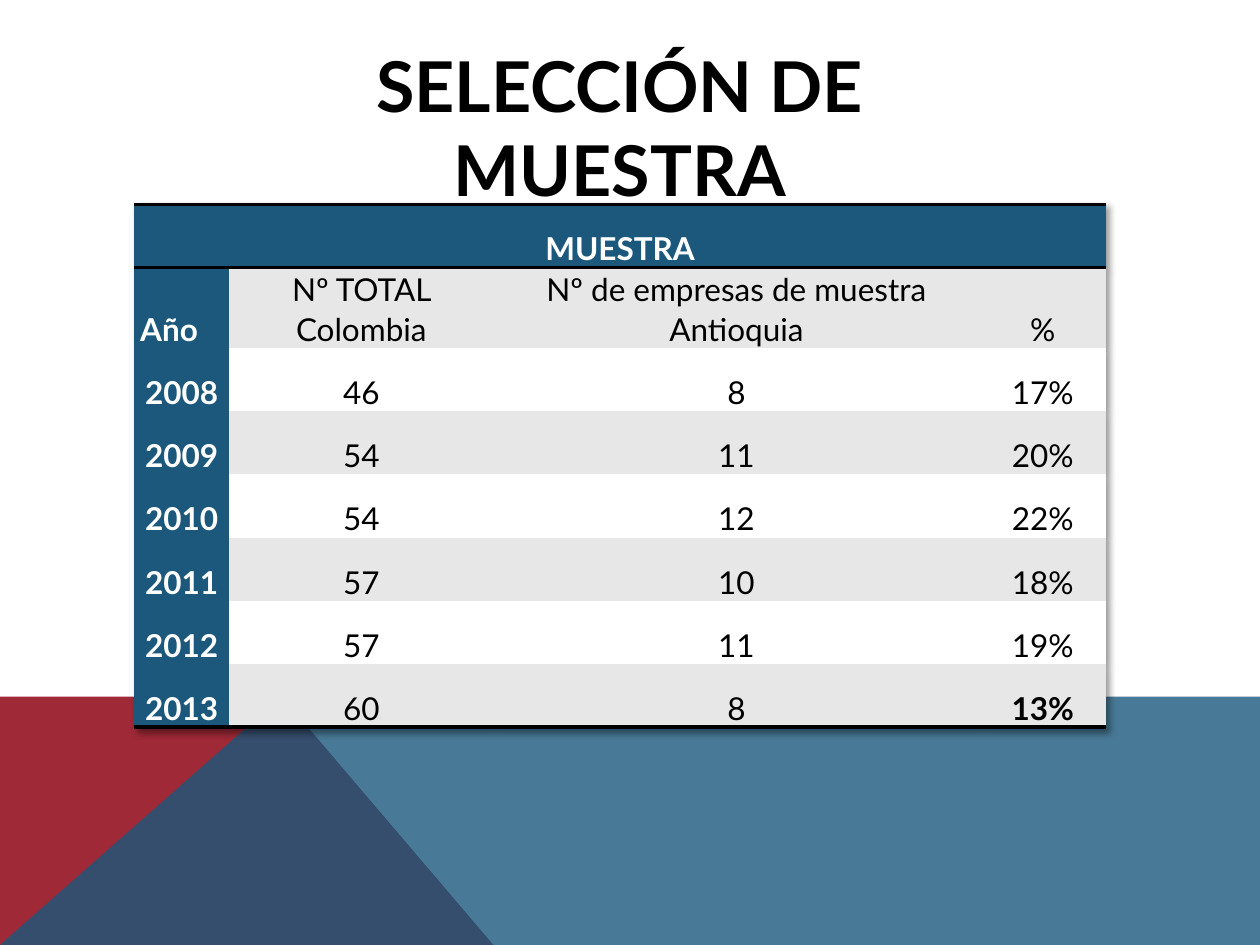
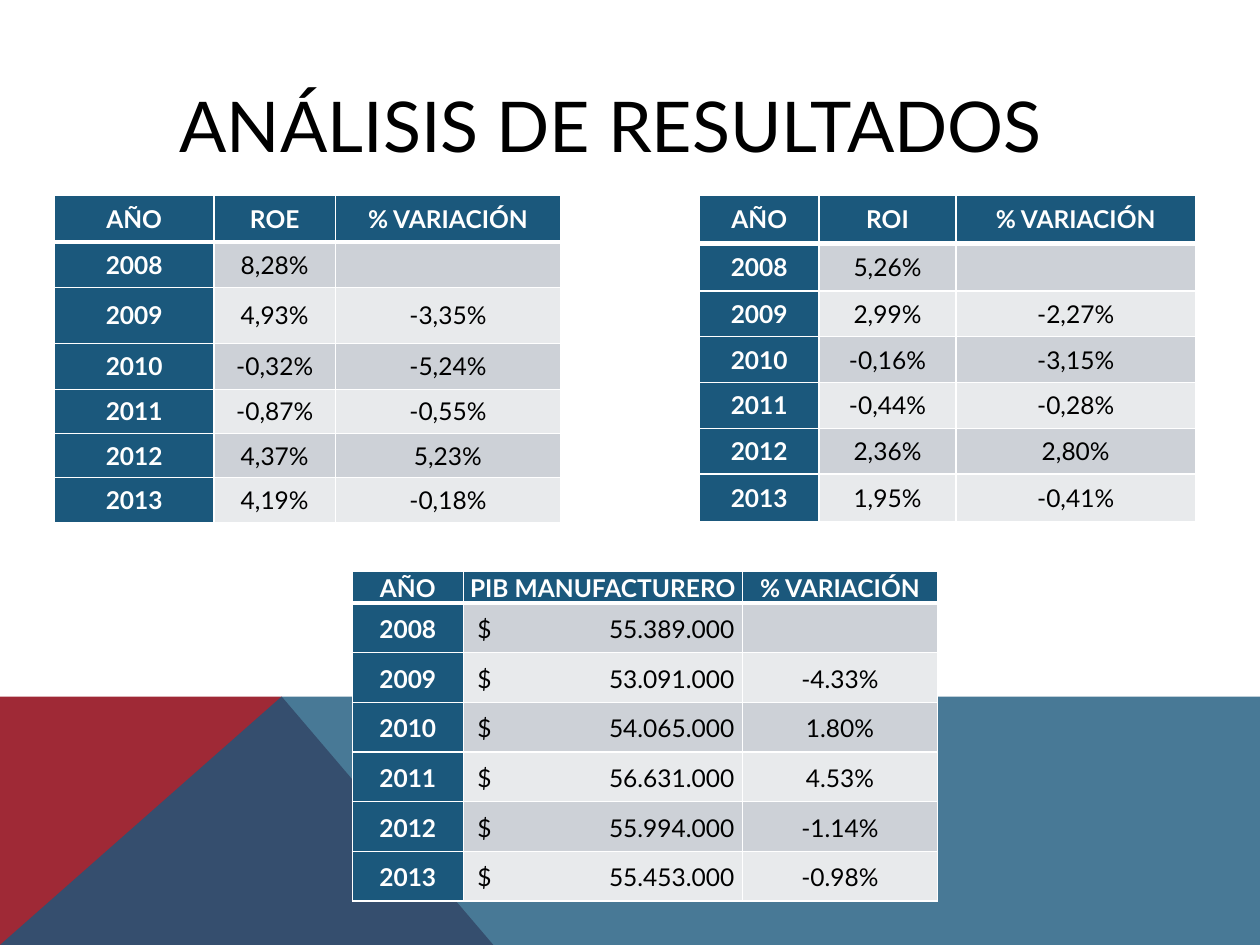
from dataclasses import dataclass

from lxml import etree
from pptx import Presentation, util as u
from pptx.dml.color import RGBColor
from pptx.enum import text
from pptx.oxml.ns import qn
from pptx.util import Pt


# Theme
@dataclass(frozen=True)
class Theme:
    font: str = "Lato"
    black: str = "000000"
    white: str = "FFFFFF"
    blue: str = "1B587C"
    red: str = "9F2936"
    greys: tuple[str, str] = ("E7E7E7", "FFFFFF")
    tints: tuple[str, str] = ("CDD1D7", "E8EAEC")
    title_size: int = 40
    sample_size: int = 18
    result_size: int = 14


THEME = Theme()
SLIDE_WIDTH, SLIDE_HEIGHT = 720, 540
NO_STYLE = "{2D5ABB26-0587-4C30-8999-92F81FD0307C}"
YEARS = ("2008", "2009", "2010", "2011", "2012", "2013")
Rows = list[tuple[str, ...]]


@dataclass(frozen=True)
class Band:
    points: tuple[tuple[float, float], ...]
    color: str
    opacity: int = 100


@dataclass(frozen=True)
class Title:
    wording: str
    left: float
    top: float
    width: float
    height: float
    bold: bool = False
    anchor: text.MSO_ANCHOR = text.MSO_ANCHOR.MIDDLE


@dataclass(frozen=True)
class DataTable:
    left: float
    top: float
    widths: tuple[float, ...]
    heights: tuple[float, ...]
    rows: Rows
    size: int = THEME.result_size
    stripes: tuple[str, str] = THEME.tints
    anchor: text.MSO_ANCHOR = text.MSO_ANCHOR.MIDDLE
    side_margin: float = 0.72
    line_spacing: float = 1.0
    grid: bool = True


BAND_TOP, PEAK_X = 397.5, 160.6
BANDS = (
    Band(((0, SLIDE_HEIGHT), (0, BAND_TOP), (PEAK_X, BAND_TOP), (281.5, SLIDE_HEIGHT)),
         THEME.red),
    Band(((0, SLIDE_HEIGHT), (PEAK_X, BAND_TOP), (SLIDE_WIDTH, BAND_TOP),
          (SLIDE_WIDTH, SLIDE_HEIGHT)), THEME.blue, 80),
)


# Drawing helpers
def add_element(parent: etree._Element, tag: str, **attributes: object) -> etree._Element:
    values = {name: str(value) for name, value in attributes.items()}
    return etree.SubElement(parent, qn(tag), values)


def format_paragraph(paragraph, size: int, color: str, bold: bool,
                     alignment=text.PP_ALIGN.CENTER) -> None:
    paragraph.alignment = alignment
    for run in paragraph.runs:
        run.font.name = THEME.font
        run.font.size = Pt(size)
        run.font.bold = bold
        run.font.color.rgb = RGBColor.from_string(color)


def draw_band(slide, band: Band) -> None:
    builder = slide.shapes.build_freeform(*band.points[0], scale=float(Pt(1)))
    builder.add_line_segments(band.points[1:], close=True)
    shape = builder.convert_to_shape()
    shape.shadow.inherit = False
    shape.line.fill.background()
    shape.fill.solid()
    shape.fill.fore_color.rgb = RGBColor.from_string(band.color)
    if band.opacity < 100:
        color = next(shape.element.spPr.iter(qn("a:srgbClr")))
        add_element(color, "a:alpha", val=band.opacity * 1000)


def draw_title(slide, title: Title) -> None:
    box = slide.shapes.add_textbox(
        Pt(title.left), Pt(title.top), Pt(title.width), Pt(title.height))
    frame = box.text_frame
    frame.word_wrap = True
    frame.vertical_anchor = title.anchor
    frame.text = title.wording
    format_paragraph(frame.paragraphs[0], THEME.title_size, THEME.black, title.bold)


def set_border(cell, side: str, color: str, width: float) -> None:
    """Draw one side (L, R, T or B); a width of zero leaves it out."""
    properties = cell._tc.get_or_add_tcPr()
    line = add_element(properties, f"a:ln{side}", w=int(Pt(width)))
    if width:
        add_element(add_element(line, "a:solidFill"), "a:srgbClr", val=color)
    else:
        add_element(line, "a:noFill")


def border_width(side: str, row: int, last_row: int, grid: bool) -> float:
    under_header = (row, side) in ((0, "B"), (1, "T"))
    if grid:
        return 3 if under_header else 1
    outer = (row, side) in ((0, "T"), (last_row, "B"))
    return 2 if under_header or outer else 0


def draw_table(slide, data: DataTable):
    frame = slide.shapes.add_table(
        len(data.rows), len(data.widths), Pt(data.left), Pt(data.top),
        Pt(sum(data.widths)), Pt(sum(data.heights)))
    next(frame.element.iter(qn("a:tableStyleId"))).text = NO_STYLE
    table = frame.table
    for column, width in zip(table.columns, data.widths):
        column.width = Pt(width)
    for row, height in zip(table.rows, data.heights):
        row.height = Pt(height)

    line_color = THEME.white if data.grid else THEME.black
    for i, row in enumerate(data.rows):
        for j, wording in enumerate(row):
            cell = table.cell(i, j)
            for side in "LRTB":
                width = border_width(side, i, len(data.rows) - 1, data.grid)
                set_border(cell, side, line_color, width)
            is_heading = i == 0 or j == 0
            fill = THEME.blue if is_heading else data.stripes[(i - 1) % 2]
            cell.fill.solid()
            cell.fill.fore_color.rgb = RGBColor.from_string(fill)
            cell.vertical_anchor = data.anchor
            cell.margin_left = cell.margin_right = Pt(data.side_margin)
            cell.margin_top = cell.margin_bottom = 0
            cell.text_frame.text = wording
            paragraph = cell.text_frame.paragraphs[0]
            paragraph.line_spacing = data.line_spacing
            format_paragraph(paragraph, data.size,
                             THEME.white if is_heading else THEME.black, is_heading)
    return frame


def add_table_shadow(frame) -> None:
    effects = etree.Element(qn("a:effectLst"))
    shadow = add_element(effects, "a:outerShdw", blurRad=int(Pt(4)), dist=int(Pt(3)),
                         dir=2700000, algn="tl", rotWithShape=0)
    color = add_element(shadow, "a:srgbClr", val=THEME.black)
    add_element(color, "a:alpha", val=40000)
    next(frame.element.iter(qn("a:tblPr"))).insert(0, effects)


def align_amounts(table, column: int, tab_position: float) -> None:
    """Keep the currency sign at the left and the amount at a right tab stop."""
    for i in range(1, len(table.rows)):
        cell = table.cell(i, column)
        cell.margin_left = Pt(8)
        paragraph = cell.text_frame.paragraphs[0]
        paragraph.alignment = text.PP_ALIGN.LEFT
        stops = add_element(paragraph._p.get_or_add_pPr(), "a:tabLst")
        add_element(stops, "a:tab", pos=int(Pt(tab_position)), algn="r")


def yearly_rows(heading: str, values: list[str], variations: list[str]) -> Rows:
    """The first year has no variation."""
    return [("AÑO", heading, "% VARIACIÓN"), *zip(YEARS, values, ["", *variations])]


def add_slide(presentation, title: Title):
    slide = presentation.slides.add_slide(presentation.slide_layouts[6])
    for band in BANDS:
        draw_band(slide, band)
    draw_title(slide, title)
    return slide


# Slide 1: sample selection
def build_sample_slide(presentation) -> None:
    slide = add_slide(presentation, Title(
        "SELECCIÓN DE MUESTRA", 121.7, 20.9, 465, 55.4, True, text.MSO_ANCHOR.TOP))
    totals = ("46", "54", "54", "57", "57", "60")
    samples = ("8", "11", "12", "10", "11", "8")
    shares = ("17%", "20%", "22%", "18%", "19%", "13%")
    frame = draw_table(slide, DataTable(
        76.5, 116.7, (54.5, 151, 277.7, 72.5), (36, 46.2, *[36.1] * len(YEARS)),
        [("MUESTRA", "", "", ""),
         ("Año", "Nº TOTAL Colombia", "Nº de empresas de muestra Antioquia", "%"),
         *zip(YEARS, totals, samples, shares)],
        THEME.sample_size, THEME.greys, text.MSO_ANCHOR.BOTTOM, 3.6, 1.07, grid=False))
    table = frame.table
    table.cell(0, 0).merge(table.cell(0, 3))
    table.cell(1, 0).text_frame.paragraphs[0].alignment = text.PP_ALIGN.LEFT
    table.cell(len(YEARS) + 1, 3).text_frame.paragraphs[0].runs[0].font.bold = True
    add_table_shadow(frame)


# Slide 2: results
def build_results_slide(presentation) -> None:
    slide = add_slide(presentation, Title("ANÁLISIS DE RESULTADOS", 25, 26, 648, 90))

    amounts = ["55.389.000", "53.091.000", "54.065.000",
               "56.631.000", "55.994.000", "55.453.000"]
    output = draw_table(slide, DataTable(
        201.3, 326.6, (63.5, 159.4, 111.6), (18, *[28.4] * len(YEARS)),
        yearly_rows("PIB MANUFACTURERO", [f"$\t{amount}" for amount in amounts],
                    ["-4.33%", "1.80%", "4.53%", "-1.14%", "-0.98%"]),
        side_margin=3.6, line_spacing=1.07))
    align_amounts(output.table, 1, 147)

    draw_table(slide, DataTable(
        31, 111.6, (91.4, 69.2, 128.8), (26.6, 26, 32, 26.4, 25.2, 25.2, 25.8),
        yearly_rows("ROE", ["8,28%", "4,93%", "-0,32%", "-0,87%", "4,37%", "4,19%"],
                    ["-3,35%", "-5,24%", "-0,55%", "5,23%", "-0,18%"])))
    draw_table(slide, DataTable(
        399.7, 111.6, (68.3, 78.3, 136.8), (27.4, 27.2, *[26.2] * 4, 27.2),
        yearly_rows("ROI", ["5,26%", "2,99%", "-0,16%", "-0,44%", "2,36%", "1,95%"],
                    ["-2,27%", "-3,15%", "-0,28%", "2,80%", "-0,41%"])))


def main() -> None:
    presentation = Presentation()
    presentation.slide_width = u.Pt(SLIDE_WIDTH)
    presentation.slide_height = u.Pt(SLIDE_HEIGHT)
    build_sample_slide(presentation)
    build_results_slide(presentation)
    presentation.save("out.pptx")


if __name__ == "__main__":
    main()
